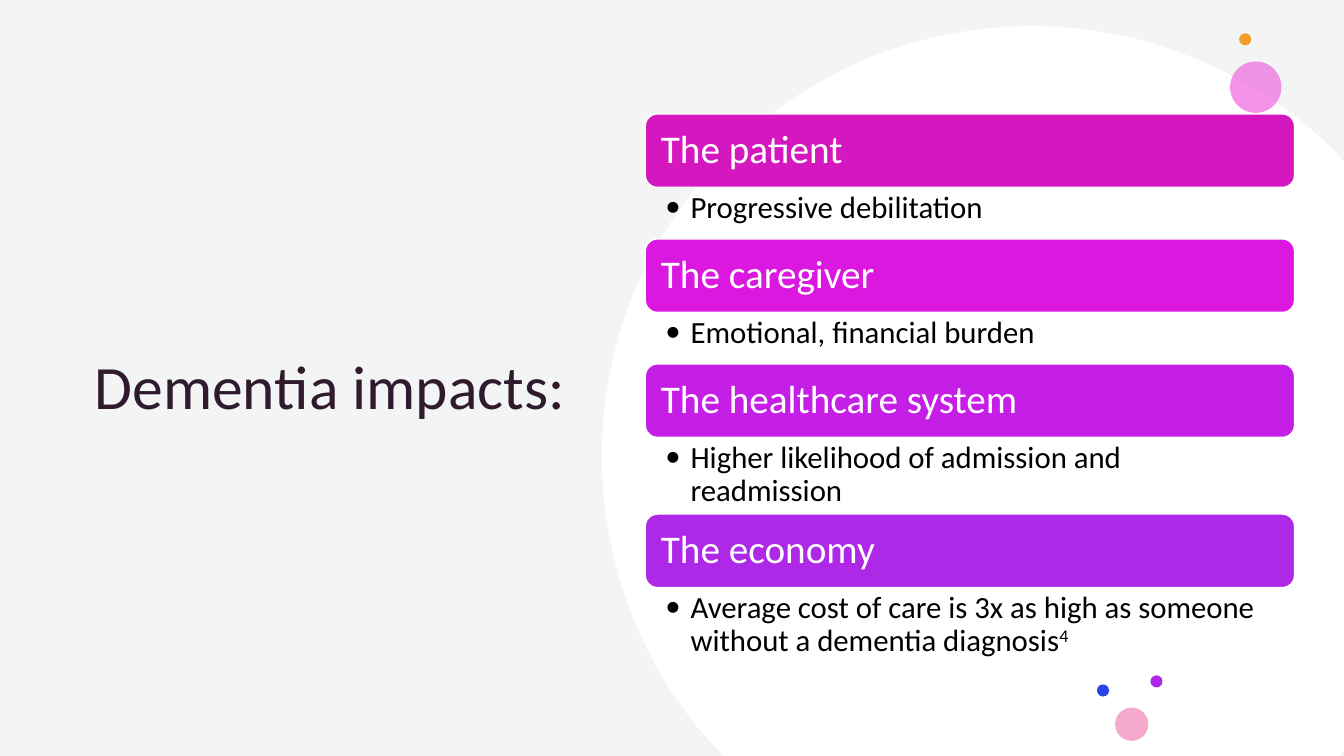
from lxml.etree import Element, SubElement
from pptx import Presentation
from pptx.dml.color import RGBColor
from pptx.enum.shapes import MSO_SHAPE as Preset
from pptx.enum.text import MSO_ANCHOR as Anchor, PP_ALIGN as Align
from pptx.oxml.ns import qn
from pptx.util import Inches, Pt

# Content
TITLE = "Dementia impacts:"
IMPACTS = [  # heading, colour, detail, footnote mark, detail lines
    ("The patient", "D517C0", "Progressive debilitation", "", 1),
    ("The caregiver", "DA18E0", "Emotional, financial burden", "", 1),
    ("The healthcare system", "C51EE6",
     "Higher likelihood of admission and readmission", "", 2),
    ("The economy", "AD29E7",
     "Average cost of care is 3x as high as someone without a dementia diagnosis", "4", 2),
]
DOTS = [  # left, top, diameter, colour, opacity in percent
    (12.2, 0.61, 0.51, "EF6BE0", 72),
    (12.29, 0.33, 0.12, "F39E29", 100),
    (11.41, 6.7, 0.12, "AD29E7", 100),
    (11.06, 7.02, 0.33, "F5A9CD", 100),
    (10.88, 6.79, 0.12, "2944E7", 100),
]

# Layout in inches
WIDTH, HEIGHT = 13.33, 7.5
LIST_LEFT, LIST_TOP, LIST_WIDTH = 6.4, 1.13, 6.44
BAR_HEIGHT = 0.73
DETAIL_HEIGHT = {1: 0.51, 2: 0.76}

# Cut-off circle: each step ends at its last point, two points before it bend it
CIRCLE_START = (10.23, 0.26)
CIRCLE_STEPS = [
    [(11.41, 0.26), (12.47, 0.74), (13.25, 1.51)],
    [(WIDTH, 1.61)],
    [(WIDTH, 7.44)],
    [(13.28, HEIGHT)],
    [(7.18, HEIGHT)],
    [(6.94, 7.24)],
    [(6.33, 6.5), (5.97, 5.55), (5.97, 4.52)],
    [(5.97, 2.17), (7.88, 0.26), CIRCLE_START],
]

TITLE_FORMAT = {"name": "Calibri", "size": Pt(44), "color": "301B2D"}
HEADING_FORMAT = {"name": "Calibri", "size": Pt(28), "color": "FFFFFF"}
DETAIL_FORMAT = {"name": "Calibri", "size": Pt(22), "color": "000000"}

presentation = Presentation()
presentation.slide_width, presentation.slide_height = Inches(WIDTH), Inches(HEIGHT)
slide = presentation.slides.add_slide(presentation.slide_layouts[6])


def paint(shape, color, opacity=100, line=None):
    shape.shadow.inherit = False
    shape.fill.solid()
    shape.fill.fore_color.rgb = RGBColor.from_string(color)
    if opacity < 100:
        fill_color = shape.fill._xPr.find(qn("a:solidFill"))[0]
        SubElement(fill_color, qn("a:alpha")).set("val", str(opacity * 1000))
    if line:
        shape.line.color.rgb = RGBColor.from_string(line)
        shape.line.width = Pt(1)
    else:
        shape.line.fill.background()


def add_preset(preset, left, top, width, height, color, opacity=100, line=None):
    shape = slide.shapes.add_shape(
        preset, Inches(left), Inches(top), Inches(width), Inches(height))
    paint(shape, color, opacity, line)
    return shape


def add_text_box(left, top, width, height):
    return slide.shapes.add_textbox(
        Inches(left), Inches(top), Inches(width), Inches(height))


def add_curved_outline(start, steps):
    ends = [(Inches(x), Inches(y)) for x, y in (step[-1] for step in steps)]
    builder = slide.shapes.build_freeform(Inches(start[0]), Inches(start[1]))
    builder.add_line_segments(ends, close=True)
    shape = builder.convert_to_shape()
    for segment, step in zip(list(shape.element.iter(qn("a:lnTo"))), steps):
        if len(step) == 3:
            curve = Element(qn("a:cubicBezTo"))
            for x, y in step:
                point = SubElement(curve, qn("a:pt"))
                point.set("x", str(Inches(x) - shape.left))
                point.set("y", str(Inches(y) - shape.top))
            segment.getparent().replace(segment, curve)
    return shape


def set_font(font, text_format):
    for key, value in text_format.items():
        if key == "color":
            font.color.rgb = RGBColor.from_string(value)
        else:
            setattr(font, key, value)


def write(shape, text, text_format, insets, anchor, mark="", bullet=False):
    frame = shape.text_frame
    frame.word_wrap, frame.vertical_anchor = True, anchor
    for side, inset in zip(("left", "top", "right", "bottom"), insets):
        setattr(frame, f"margin_{side}", Inches(inset))
    paragraph = frame.paragraphs[0]
    paragraph.alignment, paragraph.line_spacing = Align.LEFT, 0.9
    if bullet:
        paragraph.level = 1
        properties = paragraph._p.get_or_add_pPr()
        properties.set("marL", str(Inches(0.25)))
        properties.set("indent", str(Inches(-0.25)))
        SubElement(properties, qn("a:buFont")).set("typeface", "Calibri")
        SubElement(properties, qn("a:buChar")).set("char", "•")
    set_font(paragraph.font, text_format)
    for part in filter(None, (text, mark)):
        run = paragraph.add_run()
        run.text = part
        set_font(run.font, text_format)
    if mark:
        run._r.get_or_add_rPr().set("baseline", "30000")
    # Bullets take their size from the paragraph's end mark
    end_mark = SubElement(paragraph._p, qn("a:endParaRPr"))
    end_mark.set("sz", str(int(text_format["size"].pt * 100)))


# Tinted backdrop and title
add_preset(Preset.RECTANGLE, 0, 0, WIDTH, HEIGHT, "D5DEDB", 30)
write(add_text_box(0.84, 1.04, 5.04, 5.64), TITLE, TITLE_FORMAT,
      (0.1, 0.05, 0.1, 0.05), Anchor.MIDDLE)

# White circle, cut off at the slide's edges
paint(add_curved_outline(CIRCLE_START, CIRCLE_STEPS), "FFFFFF")

# Dots
for left, top, diameter, color, opacity in DOTS:
    add_preset(Preset.OVAL, left, top, diameter, diameter, color, opacity)

# Heading bars, each with its detail below
top = LIST_TOP
for heading, color, detail, mark, lines in IMPACTS:
    bar = add_preset(Preset.ROUNDED_RECTANGLE, LIST_LEFT, top, LIST_WIDTH,
                     BAR_HEIGHT, color, line="FFFFFF")
    write(bar, heading, HEADING_FORMAT, (0.12,) * 4, Anchor.MIDDLE)
    top += BAR_HEIGHT
    box = add_text_box(LIST_LEFT, top, LIST_WIDTH, DETAIL_HEIGHT[lines])
    write(box, detail, DETAIL_FORMAT, (0.2, 0.04, 0.22, 0.04), Anchor.TOP,
          mark, bullet=True)
    top += DETAIL_HEIGHT[lines]

presentation.save("out.pptx")
